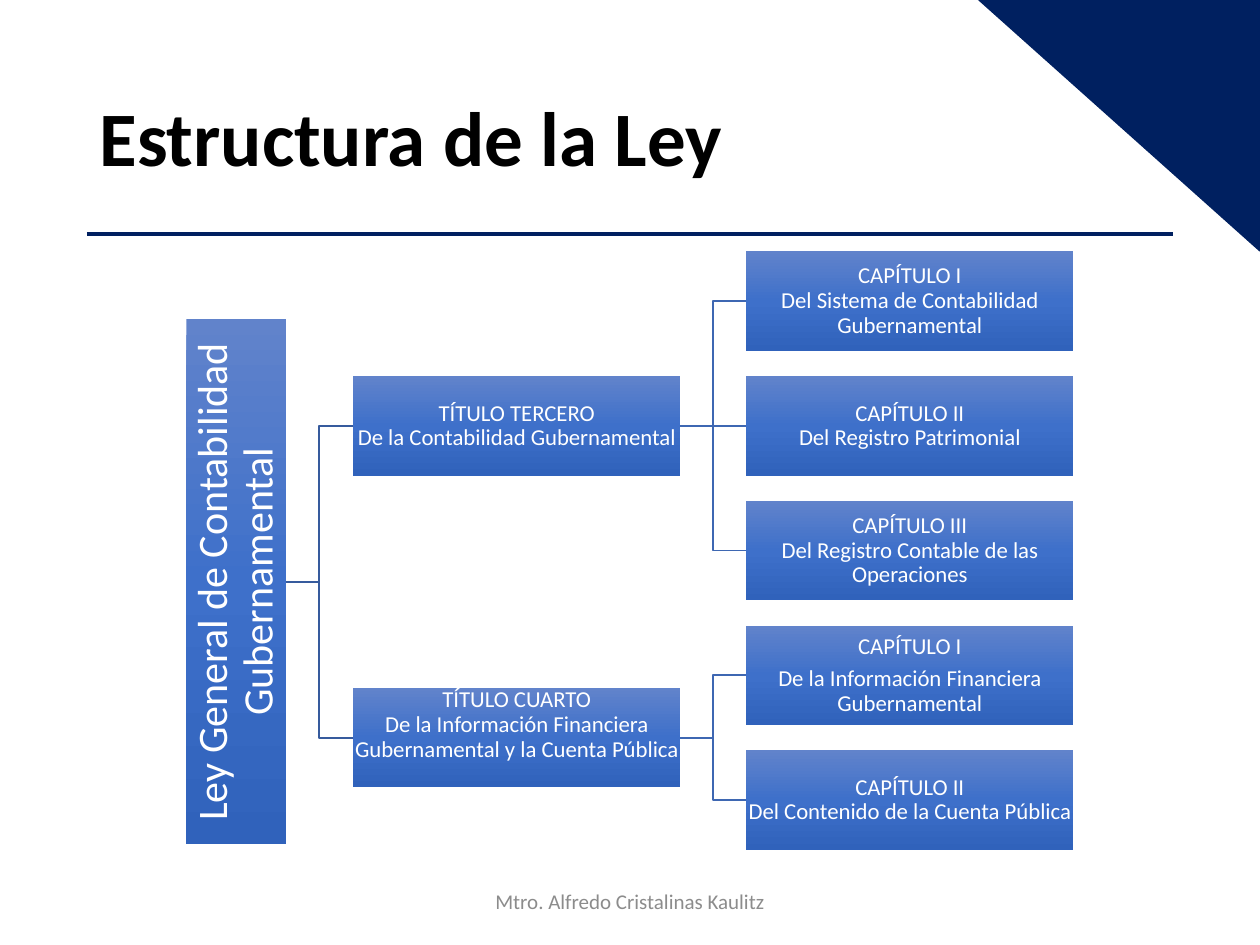
from copy import deepcopy
from dataclasses import dataclass

from pptx import Presentation
from pptx.dml.color import RGBColor
from pptx.enum.shapes import MSO_CONNECTOR, MSO_SHAPE
from pptx.enum.text import MSO_ANCHOR, PP_ALIGN
from pptx.oxml.ns import qn
from pptx.util import Inches, Pt


@dataclass(frozen=True)
class Theme:
    font: str = "Calibri"
    navy: str = "002060"
    black: str = "000000"
    white: str = "FFFFFF"
    gray: str = "8C8C8C"
    root_link: str = "365B9D"
    chapter_link: str = "3E67B2"
    gradient: tuple = ("6183CB", "3E70CA", "3062BB")
    title_size: float = 44
    root_size: float = 24
    box_size: float = 13
    footer_size: float = 12


THEME = Theme()

BOX_WIDTH, BOX_HEIGHT = 2.6, 0.79
ROOT_LEFT, ROOT_HEIGHT = 1.48, 4.17
TITLE_LEFT, CHAPTER_LEFT = 2.8, 5.92
FIRST_CENTER, ROW_STEP = 2.39, 0.99
RIGHT_SIDE, LEFT_SIDE = 3, 1

ROOT = "Ley General de Contabilidad Gubernamental"
BRANCHES = (
    ("TÍTULO TERCERO\vDe la Contabilidad Gubernamental", 0.01, (
        "CAPÍTULO I\vDel Sistema de Contabilidad Gubernamental",
        "CAPÍTULO II\vDel Registro Patrimonial",
        "CAPÍTULO III\vDel Registro Contable de las Operaciones",
    )),
    ("TÍTULO CUARTO\vDe la Información Financiera Gubernamental y la Cuenta Pública", 0.21, (
        "CAPÍTULO I\nDe la Información Financiera Gubernamental",
        "CAPÍTULO II\vDel Contenido de la Cuenta Pública",
    )),
)


def color(value):
    return RGBColor.from_string(value)


def write_text(shape, text, *, size, fill, bold=False, align=PP_ALIGN.CENTER,
               line_spacing=0.9, space_after=0, inset=None, bottom=None):
    frame = shape.text_frame
    frame.word_wrap = True
    frame.vertical_anchor = MSO_ANCHOR.MIDDLE
    if inset is not None:
        frame.margin_left = frame.margin_right = frame.margin_top = Inches(inset)
        frame.margin_bottom = Inches(inset if bottom is None else bottom)
    frame.text = text
    for paragraph in frame.paragraphs:
        paragraph.alignment = align
        paragraph.line_spacing = line_spacing
        paragraph.space_after = Pt(space_after)
        for run in paragraph.runs:
            run.font.name = THEME.font
            run.font.size = Pt(size)
            run.font.bold = bold
            run.font.color.rgb = color(fill)


def fill_gradient(shape):
    shape.fill.gradient()
    shape.fill.gradient_angle = 270
    stop_list = shape.element.spPr.find(qn("a:gradFill")).find(qn("a:gsLst"))
    stop_list.insert(1, deepcopy(stop_list[0]))
    for stop, position, value in zip(shape.fill.gradient_stops, (0, 0.5, 1), THEME.gradient):
        stop.position = position
        stop.color.rgb = color(value)


def add_box(slide, text, left, center, *, width=BOX_WIDTH, height=BOX_HEIGHT,
            size=THEME.box_size, inset=0.01, bottom=None):
    box = slide.shapes.add_shape(
        MSO_SHAPE.RECTANGLE, Inches(left), Inches(center - height / 2),
        Inches(width), Inches(height))
    box.shadow.inherit = False
    box.line.fill.background()
    fill_gradient(box)
    write_text(box, text, size=size, fill=THEME.white, space_after=4.5,
               inset=inset, bottom=bottom)
    return box


def style_line(connector, value, width):
    connector.line.color.rgb = color(value)
    connector.line.width = Pt(width)
    properties = connector.element.spPr
    properties.append(properties.makeelement(qn("a:effectLst"), {}))


def link(slide, parent, child, value):
    offset = (parent.top + parent.height / 2) - (child.top + child.height / 2)
    kind = MSO_CONNECTOR.STRAIGHT if abs(offset) < Inches(0.01) else MSO_CONNECTOR.ELBOW
    connector = slide.shapes.add_connector(kind, 0, 0, 0, 0)
    connector.begin_connect(parent, RIGHT_SIDE)
    connector.end_connect(child, LEFT_SIDE)
    style_line(connector, value, 1)


def add_decoration(slide):
    corner = slide.shapes.add_shape(
        MSO_SHAPE.RIGHT_TRIANGLE, Inches(7.75), Inches(-0.02), Inches(2.25), Inches(2.01))
    corner.rotation = 180
    corner.shadow.inherit = False
    corner.fill.solid()
    corner.fill.fore_color.rgb = color(THEME.navy)
    corner.line.color.rgb = color(THEME.navy)
    corner.line.width = Pt(1)
    rule = slide.shapes.add_connector(
        MSO_CONNECTOR.STRAIGHT, Inches(0.69), Inches(1.86), Inches(9.31), Inches(1.86))
    style_line(rule, THEME.navy, 2.25)


def add_title(slide, text):
    title = slide.shapes.title
    title.left, title.top = Inches(0.69), Inches(0.4)
    title.width, title.height = Inches(7.66), Inches(1.45)
    write_text(title, text, size=THEME.title_size, fill=THEME.black, bold=True,
               align=PP_ALIGN.LEFT)


def add_tree(slide):
    titles, centers, row = [], [], 0
    for text, bottom, chapters in BRANCHES:
        rows = [FIRST_CENTER + ROW_STEP * (row + index) for index in range(len(chapters))]
        row += len(chapters)
        center = sum(rows) / len(rows)
        title = add_box(slide, text, TITLE_LEFT, center, bottom=bottom)
        for chapter, chapter_center in zip(chapters, rows):
            box = add_box(slide, chapter, CHAPTER_LEFT, chapter_center)
            link(slide, title, box, THEME.chapter_link)
        titles.append(title)
        centers.append(center)
    root = add_box(slide, ROOT, ROOT_LEFT, sum(centers) / len(centers), width=BOX_HEIGHT,
                   height=ROOT_HEIGHT, size=THEME.root_size, inset=0.02)
    root.text_frame._txBody.bodyPr.set("vert", "vert270")
    for title in titles:
        link(slide, root, title, THEME.root_link)


def add_footer(slide, text):
    footer = slide.shapes.add_textbox(Inches(3.31), Inches(6.95), Inches(3.38), Inches(0.4))
    write_text(footer, text, size=THEME.footer_size, fill=THEME.gray, line_spacing=1.0)


def main():
    presentation = Presentation()
    presentation.slide_width, presentation.slide_height = Inches(10), Inches(7.5)
    slide = presentation.slides.add_slide(presentation.slide_layouts.get_by_name("Title Only"))
    add_decoration(slide)
    add_title(slide, "Estructura de la Ley")
    add_tree(slide)
    add_footer(slide, "Mtro. Alfredo Cristalinas Kaulitz")
    presentation.save("out.pptx")


if __name__ == "__main__":
    main()
